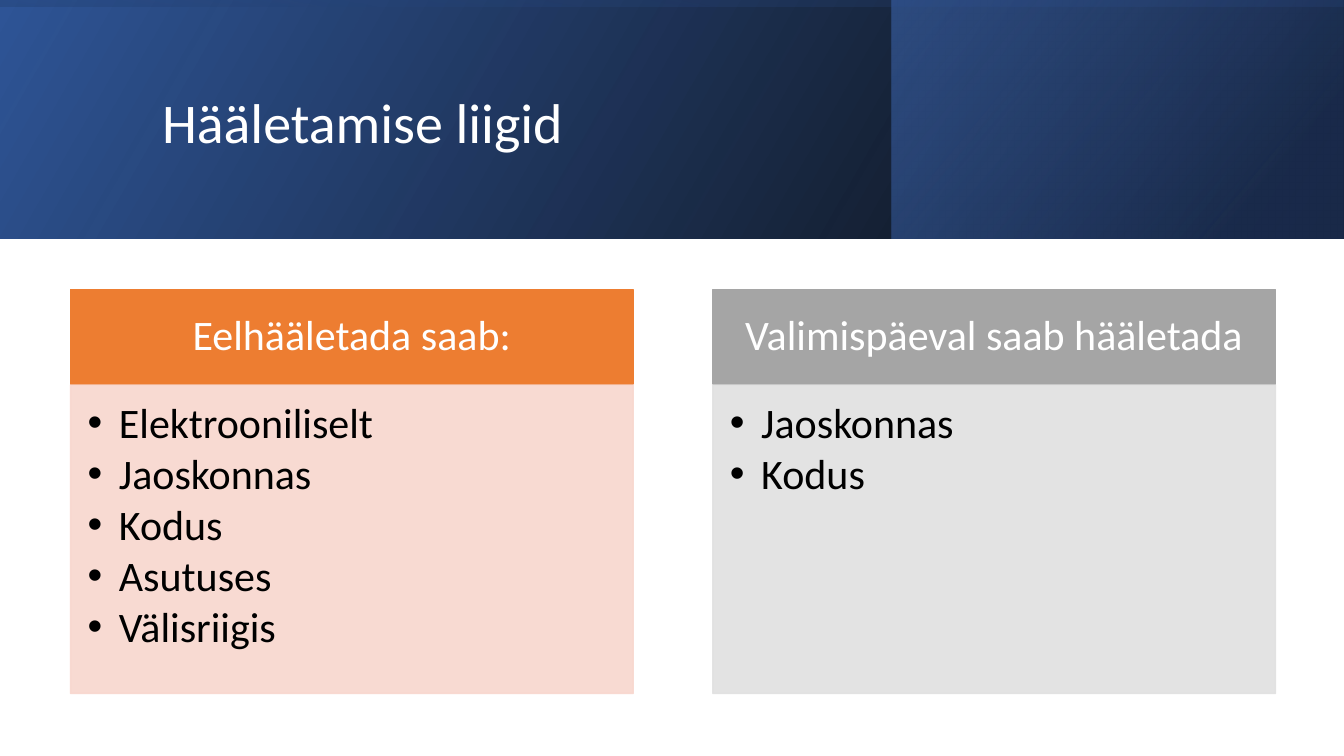
from lxml import etree
from pptx import Presentation
from pptx.dml.color import RGBColor
from pptx.enum.shapes import MSO_SHAPE
from pptx.enum.text import MSO_ANCHOR, PP_ALIGN
from pptx.oxml.ns import qn
from pptx.util import Inches, Pt

RECTANGLE = MSO_SHAPE.RECTANGLE
TOP, MIDDLE = MSO_ANCHOR.TOP, MSO_ANCHOR.MIDDLE
LEFT, CENTER = PP_ALIGN.LEFT, PP_ALIGN.CENTER


def color(hex_value):
    return RGBColor.from_string(hex_value)


def write(shape, lines, size=30, hex_value="FFFFFF", align=LEFT, anchor=MIDDLE,
          insets=(0.1, 0.05, 0.1, 0.05), after=0, indent=0):
    frame = shape.text_frame
    frame.word_wrap = True
    frame.vertical_anchor = anchor
    (frame.margin_left, frame.margin_top,
     frame.margin_right, frame.margin_bottom) = map(Inches, insets)
    frame.text = "\n".join(lines)
    for paragraph in frame.paragraphs:
        paragraph.alignment = align
        paragraph.line_spacing = 0.9
        paragraph.space_after = Pt(after)
        paragraph.font.name = "Calibri"
        paragraph.font.size = Pt(size)
        paragraph.font.color.rgb = color(hex_value)
        if indent:
            properties = paragraph._p.get_or_add_pPr()
            properties.set("marL", str(Inches(indent)))
            properties.set("indent", str(-Inches(indent)))
            bullet_font = etree.Element(qn("a:buFont"), typeface="Arial")
            bullet = etree.Element(qn("a:buChar"), char="•")
            default_run = properties.find(qn("a:defRPr"))
            default_run.addprevious(bullet_font)
            default_run.addprevious(bullet)


presentation = Presentation()
presentation.slide_width = Inches(13.33)
presentation.slide_height = Inches(7.5)
slide = presentation.slides.add_slide(presentation.slide_layouts[6])

header_bands = [
    ((0, 0, 13.33, 2.37), 0, 330, [(0, "000000", 96), (100, "2F5597", 100)]),
    ((8.84, 0, 4.48, 2.37), 0, 320, [(19, "203864", 68), (100, "4472C4", 48)]),
    ((5.48, -5.48, 2.37, 13.33), 270, 350, [(23, "2F5597", 16), (99, "000000", 45)]),
]
for place, rotation, angle, stops in header_bands:
    band = slide.shapes.add_shape(RECTANGLE, *map(Inches, place))
    band.shadow.inherit = False
    band.line.fill.background()
    band.rotation = rotation
    band.fill.gradient()
    properties = band._element.spPr
    properties.find(qn("a:xfrm")).set("flipH", "1")
    gradient = properties.find(qn("a:gradFill"))
    for part in list(gradient):
        gradient.remove(part)
    stop_list = etree.SubElement(gradient, qn("a:gsLst"))
    for position, hex_value, opacity in stops:
        stop = etree.SubElement(stop_list, qn("a:gs"), pos=str(position * 1000))
        tint = etree.SubElement(stop, qn("a:srgbClr"), val=hex_value)
        etree.SubElement(tint, qn("a:alpha"), val=str(opacity * 1000))
    etree.SubElement(gradient, qn("a:lin"), ang=str(angle * 60000), scaled="0")

title = slide.shapes.add_textbox(Inches(1.51), Inches(0.38), Inches(10.63), Inches(1.72))
write(title, ["Hääletamise liigid"], size=40)

voting_kinds = [
    ("Eelhääletada saab:", "ED7D31", "F8D7CE",
     ["Elektrooniliselt", "Jaoskonnas", "Kodus", "Asutuses", "Välisriigis"]),
    ("Valimispäeval saab hääletada", "A5A5A5", "E1E1E1", ["Jaoskonnas", "Kodus"]),
]
for column, (heading, heading_fill, body_fill, ways) in enumerate(voting_kinds):
    left = 0.7 + column * 6.37
    heading_format = dict(align=CENTER, insets=(0.23, 0.13, 0.23, 0.13))
    body_format = dict(hex_value="000000", anchor=TOP, after=4, indent=0.31,
                       insets=(0.17, 0.17, 0.23, 0.26))
    for top, height, fill, opacity, lines, text_format in [
        (2.87, 0.94, heading_fill, 100, [heading], heading_format),
        (3.82, 3.06, body_fill, 90, ways, body_format),
    ]:
        box = slide.shapes.add_shape(
            RECTANGLE, Inches(left), Inches(top), Inches(5.58), Inches(height))
        box.shadow.inherit = False
        box.fill.solid()
        box.fill.fore_color.rgb = color(fill)
        box.line.color.rgb = color(fill)
        box.line.width = Pt(1)
        for tint in box._element.spPr.iter(qn("a:srgbClr")):
            etree.SubElement(tint, qn("a:alpha"), val=str(opacity * 1000))
        write(box, lines, **text_format)

presentation.save("out.pptx")
